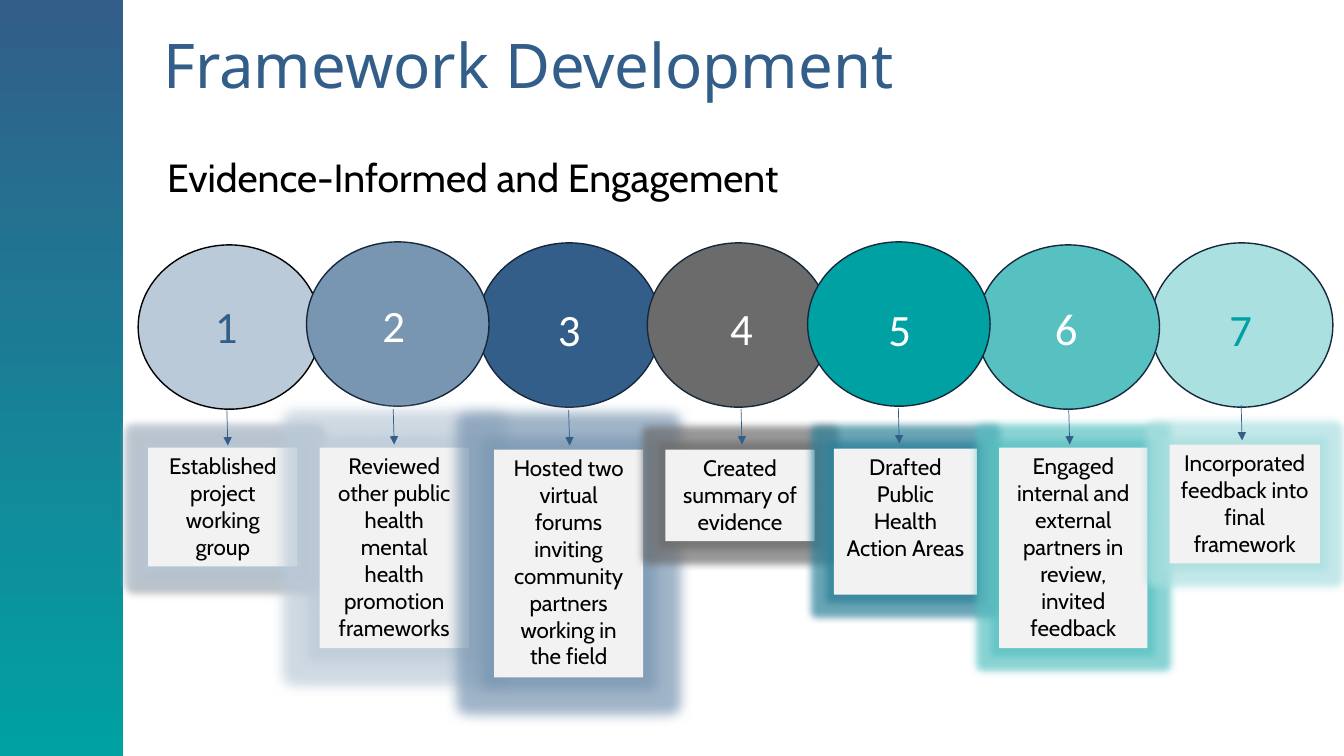
from collections import namedtuple

from lxml import etree
from pptx import Presentation
from pptx.dml.color import RGBColor
from pptx.enum import shapes, text
from pptx.oxml import ns
from pptx.util import Inches, Pt

WIDTH, HEIGHT = 13.33, 7.5
COLORS = {
    "navy": "325E89", "teal": "00A1A3", "white": "FFFFFF", "black": "000000",
    "outline": "16293C", "card": "F2F2F2", "pale blue": "BBCAD8",
    "mid blue": "7895B1", "gray": "6B6B6B", "sea": "57C1C2",
    "pale teal": "ABE0E1", "petrol": "2A7F98",
}
Box = namedtuple("Box", "left top width height")
Step = namedtuple("Step", "circle fill ink number arrow card glow radius lines")
TIMELINE = Box(1.37, 2.4, 11.85, 4.32)
CIRCLE = (1.81, 1.63)
STEPS = [
    Step((0, 0.03), "pale blue", "navy", (0.44, 0.48), (0.88, 1.64),
         (0.1, 2.01, 1.48, 1.18), "pale blue", 11,
         ["Established project working group"]),
    Step((1.67, 0), "mid blue", "white", (0.43, 0.5), (0.86, 1.66),
         (0.13, 2.04, 1.48, 1.99), "pale blue", 18,
         ["Reviewed other public health mental health promotion frameworks"]),
    Step((3.37, 0.01), "navy", "white", (0.47, 0.53), (0.9, 1.66),
         (0.16, 2.05, 1.48, 2.26), "mid blue", 18,
         ["Hosted two virtual", "forums inviting community partners working in the field"]),
    Step((5.05, 0.01), "gray", "white", (0.5, 0.52), (0.93, 1.65),
         (0.18, 2.05, 1.48, 0.91), "gray", 11,
         ["Created summary of evidence"]),
    Step((6.64, 0), "teal", "white", (0.48, 0.54), (0.9, 1.65),
         (0.26, 2.05, 1.42, 1.45), "petrol", 11,
         ["Drafted Public Health Action Areas"]),
    Step((8.32, 0.03), "sea", "white", (0.45, 0.5), (0.91, 1.63),
         (0.22, 2.01, 1.47, 1.99), "sea", 11,
         ["Engaged internal and external partners in review, invited feedback"]),
    Step((10.04, 0.01), "pale teal", "teal", (0.46, 0.53), (0.9, 1.61),
         (0.19, 2, 1.49, 1.18), "pale teal", 11,
         ["Incorporated feedback into final framework"]),
]
CIRCLE_ORDER = [1, 3, 2, 4, 7, 6, 5]


def color(name):
    """Return the named palette colour."""
    return RGBColor.from_string(COLORS[name])


def inside(area, left, top, width, height):
    """Return a box offset from the corner of an area."""
    return Box(area.left + left, area.top + top, width, height)


def emu(box):
    """Convert a box to slide units."""
    return [Inches(length) for length in box]


def write(shape, lines, font, size, ink, align=None, anchor=text.MSO_ANCHOR.TOP, spacing=None):
    """Write paragraphs into a shape."""
    frame = shape.text_frame
    frame.word_wrap = True
    frame.vertical_anchor = anchor
    for index, line in enumerate(lines):
        para = frame.add_paragraph() if index else frame.paragraphs[0]
        para.alignment = align
        para.line_spacing = spacing
        span = para.add_run()
        span.text = line
        span.font.name = font
        span.font.size = Pt(size)
        span.font.color.rgb = color(ink)


def add_effect(parent, kind, shade, alpha, **attributes):
    """Append a coloured effect to an effect list."""
    effect = etree.SubElement(parent, ns.qn("a:" + kind), attributes)
    paint = etree.SubElement(effect, ns.qn("a:srgbClr"), val=COLORS[shade])
    etree.SubElement(paint, ns.qn("a:alpha"), val=str(alpha * 1000))


def add_sidebar(page, area):
    """Draw the vertical gradient band."""
    band = page.shapes.add_shape(shapes.MSO_SHAPE.RECTANGLE, *emu(area))
    band.shadow.inherit = False
    band.line.fill.background()
    band.fill.gradient()
    band.fill.gradient_angle = 270
    for stop, position, name in zip(band.fill.gradient_stops, (0, 1), ("navy", "teal")):
        stop.position = position
        stop.color.rgb = color(name)


def add_heading(page, area):
    """Place the title and the subtitle."""
    title = page.shapes.add_textbox(*emu(inside(area, 0, 0, 9.13, 0.56)))
    write(title, ["Framework Development"], "Noto Sans", 44, "navy",
          anchor=text.MSO_ANCHOR.MIDDLE, spacing=0.9)
    subtitle = page.shapes.add_textbox(*emu(inside(area, 0.04, 1.07, area.width, 0.6)))
    write(subtitle, ["Evidence-Informed and Engagement"], "Cabin", 28, "black")


def add_circle(page, area, step):
    """Draw the disc of a step."""
    disc = page.shapes.add_shape(shapes.MSO_SHAPE.FLOWCHART_CONNECTOR, *emu(area))
    disc.shadow.inherit = False
    disc.fill.solid()
    disc.fill.fore_color.rgb = color(step.fill)
    disc.line.color.rgb = color("black" if step is STEPS[0] else "outline")
    disc.line.width = Pt(1)


def add_card(page, area, step):
    """Draw the glowing description card of a step."""
    card = page.shapes.add_shape(shapes.MSO_SHAPE.RECTANGLE, *emu(area))
    card.shadow.inherit = False
    card.fill.solid()
    card.fill.fore_color.rgb = color("card")
    card.line.fill.background()
    effects = card._element.spPr.find(ns.qn("a:effectLst"))
    add_effect(effects, "glow", step.glow, 70, rad=str(Pt(step.radius)))
    if step is STEPS[0]:
        add_effect(effects, "outerShdw", "black", 40, blurRad=str(Pt(4)),
                   dist=str(Pt(3)), dir="2700000", algn="tl", rotWithShape="0")
    write(card, step.lines, "Cabin", 16, "black", text.PP_ALIGN.CENTER)


def add_number(page, area, number, ink):
    """Write the number of a step."""
    label = page.shapes.add_textbox(*emu(area))
    write(label, [str(number)], "Calibri", 32, ink, text.PP_ALIGN.CENTER)


def add_arrow(page, area):
    """Draw the arrow from a disc down to its card."""
    left, top, width, height = area
    arrow = page.shapes.add_connector(
        shapes.MSO_CONNECTOR.STRAIGHT, *emu((left, top, left + width, top + height)))
    arrow.line.color.rgb = color("navy")
    arrow.line.width = Pt(0.5)
    etree.SubElement(arrow.line._get_or_add_ln(), ns.qn("a:tailEnd"), type="triangle")
    etree.SubElement(arrow._element.spPr, ns.qn("a:effectLst"))


def add_timeline(page, area):
    """Draw the overlapping discs with their cards, numbers and arrows."""
    discs = [inside(area, *step.circle, *CIRCLE) for step in STEPS]
    for number in CIRCLE_ORDER:
        add_circle(page, discs[number - 1], STEPS[number - 1])
    for disc, step in zip(discs, STEPS):
        add_card(page, inside(disc, *step.card), step)
    for number, (disc, step) in enumerate(zip(discs, STEPS), 1):
        add_number(page, inside(disc, *step.number, 0.87, 0.64), number, step.ink)
        add_arrow(page, inside(disc, *step.arrow, 0.01, 0.35))


def main():
    """Build and save the deck."""
    deck = Presentation()
    deck.slide_width, deck.slide_height = Inches(WIDTH), Inches(HEIGHT)
    page = deck.slides.add_slide(deck.slide_layouts[6])
    add_sidebar(page, Box(0, 0, 1.22, HEIGHT))
    add_heading(page, Box(1.52, 0.4, 11.45, 1.67))
    add_timeline(page, TIMELINE)
    deck.save("out.pptx")


if __name__ == "__main__":
    main()
